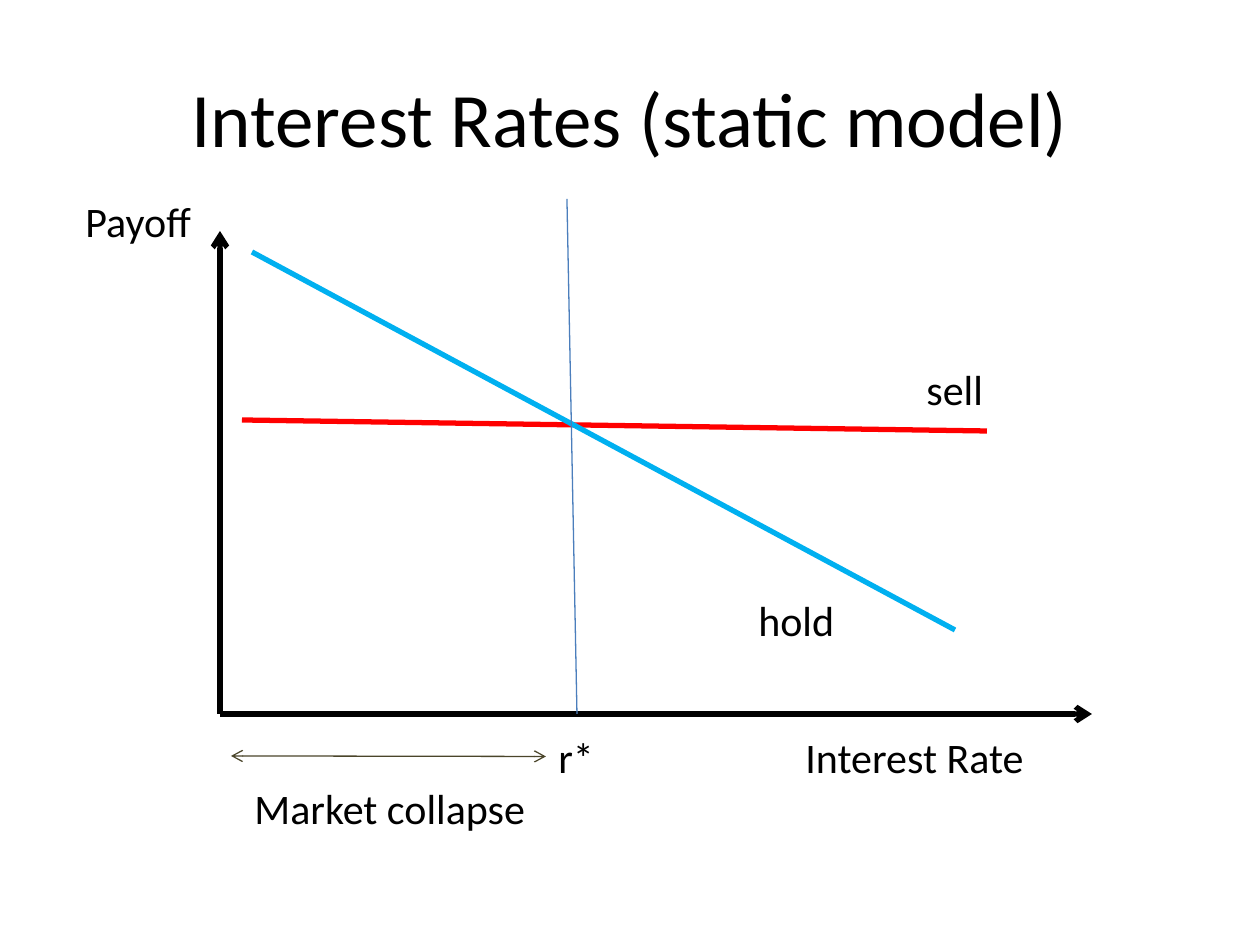
import dataclasses

import pptx
import pptx.dml.color
import pptx.enum.shapes
import pptx.enum.text
import pptx.oxml.ns
import pptx.util
from lxml import etree

PX = 914400 // 126


@dataclasses.dataclass(frozen=True)
class Theme:
    font: str = "Calibri"
    ink: str = "000000"
    sell: str = "FF0000"
    hold: str = "00B0F0"
    guide: str = "4B7EBC"
    span: str = "4A452A"
    title: int = 44
    label: int = 24
    thick: float = 3
    thin: float = 0.75


THEME = Theme()


def color(code):
    return pptx.dml.color.RGBColor.from_string(code)


def add_text(slide, text, box, size):
    shape = slide.shapes.add_textbox(*(n * PX for n in box))
    frame = shape.text_frame
    frame.text = text
    font = frame.paragraphs[0].runs[0].font
    font.name = THEME.font
    font.size = pptx.util.Pt(size)
    font.color.rgb = color(THEME.ink)
    return shape


def add_title(slide, text, box):
    frame = add_text(slide, text, box, THEME.title).text_frame
    frame.word_wrap = True
    frame.vertical_anchor = pptx.enum.text.MSO_ANCHOR.MIDDLE
    frame.paragraphs[0].alignment = pptx.enum.text.PP_ALIGN.CENTER


def add_label(slide, text, left, top, width):
    shape = add_text(slide, text, (left, top, width, 63), THEME.label)
    shape.text_frame.word_wrap = False
    shape.text_frame.auto_size = pptx.enum.text.MSO_AUTO_SIZE.SHAPE_TO_FIT_TEXT
    return shape


def add_line(slide, start, end, code, width, ends=()):
    """Draw a line; ends names the tips (headEnd, tailEnd) with an arrow."""
    line = slide.shapes.add_connector(
        pptx.enum.shapes.MSO_CONNECTOR.STRAIGHT,
        *(n * PX for n in (*start, *end)))
    line.line.color.rgb = color(code)
    line.line.width = pptx.util.Pt(width)
    qn = pptx.oxml.ns.qn
    props = line._element.spPr
    for tip in ends:
        etree.SubElement(props.find(qn("a:ln")), qn("a:" + tip), type="arrow")
    etree.SubElement(props, qn("a:effectLst"))
    return line


def add_axes(slide):
    origin = (220, 714)
    for tip in ((220, 231), (1092, 714)):
        add_line(slide, origin, tip, THEME.ink, THEME.thick, ["tailEnd"])


def add_curves(slide):
    add_line(slide, (242, 420), (987, 431), THEME.sell, THEME.thick)
    add_line(slide, (252, 252), (955, 630), THEME.hold, THEME.thick)


def add_span(slide):
    """Mark the critical rate and the range below it."""
    add_line(slide, (567, 199), (577, 714), THEME.guide, THEME.thin)
    rate = add_label(slide, "r*", 546, 725, 62)
    span = add_line(slide, (231, 756), (546, 756), THEME.span, THEME.thin,
                    ["headEnd", "tailEnd"])
    span.end_connect(rate, 1)


def main():
    deck = pptx.Presentation()
    deck.slide_width = 1260 * PX
    deck.slide_height = 945 * PX
    slide = deck.slides.add_slide(deck.slide_layouts[6])
    add_title(slide, "Interest Rates (static model)", (63, 38, 1134, 158))
    add_axes(slide)
    add_curves(slide)
    for label in (("sell", 914, 357, 83),
                  ("hold", 746, 588, 102),
                  ("Interest Rate", 793, 725, 246),
                  ("Payoff", 73, 189, 132),
                  ("Market collapse", 242, 776, 299)):
        add_label(slide, *label)
    add_span(slide)
    deck.save("out.pptx")


if __name__ == "__main__":
    main()
